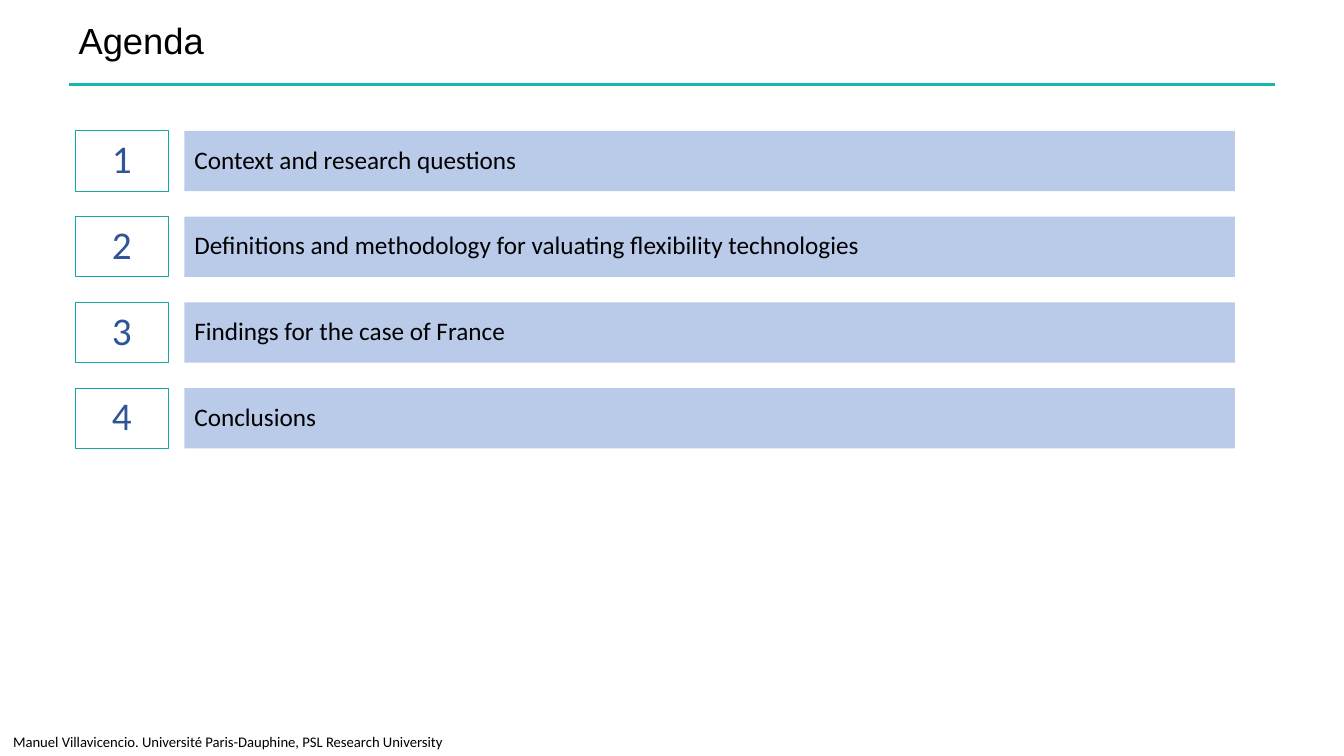
from lxml import etree
from pptx import Presentation
from pptx import util as u
from pptx.dml.color import RGBColor
from pptx.enum import shapes, text
from pptx.oxml import ns

COLORS = {
    "black": "000000",
    "rule": "16B6B2",
    "outline": "14A8A4",
    "bar": "4472C4",
    "number": "2F5597",
}
BAR_OPACITY = 37000
TOPICS = [
    "Context and research questions",
    "Definitions and methodology for valuating flexibility technologies",
    "Findings for the case of France",
    "Conclusions",
]
FIRST_TOP, ROW_PITCH, ROW_HEIGHT = 3.3, 2.16, 1.52
LEFT, CENTER = text.PP_ALIGN.LEFT, text.PP_ALIGN.CENTER


def color(name):
    return RGBColor.from_string(COLORS[name])


def write(shape, words, size, font="Calibri", ink="black", align=LEFT,
          spacing=0.9, anchor=text.MSO_ANCHOR.MIDDLE):
    """Fill a shape with one formatted paragraph."""
    frame = shape.text_frame
    frame.word_wrap = True
    frame.vertical_anchor = anchor
    paragraph = frame.paragraphs[0]
    paragraph.text = words
    for name, value in {"alignment": align, "line_spacing": spacing}.items():
        setattr(paragraph, name, value)
    run_font = paragraph.runs[0].font
    for name, value in {"name": font, "size": u.Pt(size)}.items():
        setattr(run_font, name, value)
    run_font.color.rgb = color(ink)


presentation = Presentation()
presentation.slide_width = u.Cm(33.87)
presentation.slide_height = u.Cm(19.05)
slide = presentation.slides.add_slide(presentation.slide_layouts[6])

# Heading and rule
rule = slide.shapes.add_connector(
    shapes.MSO_CONNECTOR.STRAIGHT, u.Cm(1.73), u.Cm(2.13), u.Cm(32.13), u.Cm(2.13))
rule.line.color.rgb = color("rule")
rule.line.width = u.Pt(2)
etree.SubElement(rule._element.spPr, ns.qn("a:effectLst"))

heading = slide.shapes.add_textbox(u.Cm(1.73), u.Cm(0), u.Cm(30.4), u.Cm(2.13))
write(heading, "Agenda", 26, font="Arial")

# Agenda rows
for index, topic in enumerate(TOPICS):
    top = u.Cm(FIRST_TOP + index * ROW_PITCH)

    bar = slide.shapes.add_shape(
        shapes.MSO_SHAPE.RECTANGLE, u.Cm(4.65), top, u.Cm(26.47), u.Cm(ROW_HEIGHT))
    bar.shadow.inherit = False
    bar.fill.solid()
    bar.fill.fore_color.rgb = color("bar")
    bar_color = bar._element.spPr.find(".//" + ns.qn("a:srgbClr"))
    etree.SubElement(bar_color, ns.qn("a:alpha"), val=str(BAR_OPACITY))
    bar.line.fill.background()
    write(bar, topic, 18)

    number = slide.shapes.add_shape(
        shapes.MSO_SHAPE.RECTANGLE, u.Cm(1.9), top, u.Cm(2.34), u.Cm(ROW_HEIGHT))
    number.shadow.inherit = False
    number.fill.background()
    number.line.color.rgb = color("outline")
    number.line.width = u.Pt(0.75)
    write(number, str(index + 1), 28, ink="number", align=CENTER)

# Footer
footer = slide.shapes.add_textbox(u.Cm(0), u.Cm(18.34), u.Cm(20.47), u.Cm(0.73))
footer.text_frame.margin_left = u.Cm(0.33)
write(footer, "Manuel Villavicencio. Université Paris-Dauphine, PSL Research University",
      10.5, spacing=1.0, anchor=text.MSO_ANCHOR.TOP)

presentation.save("out.pptx")
